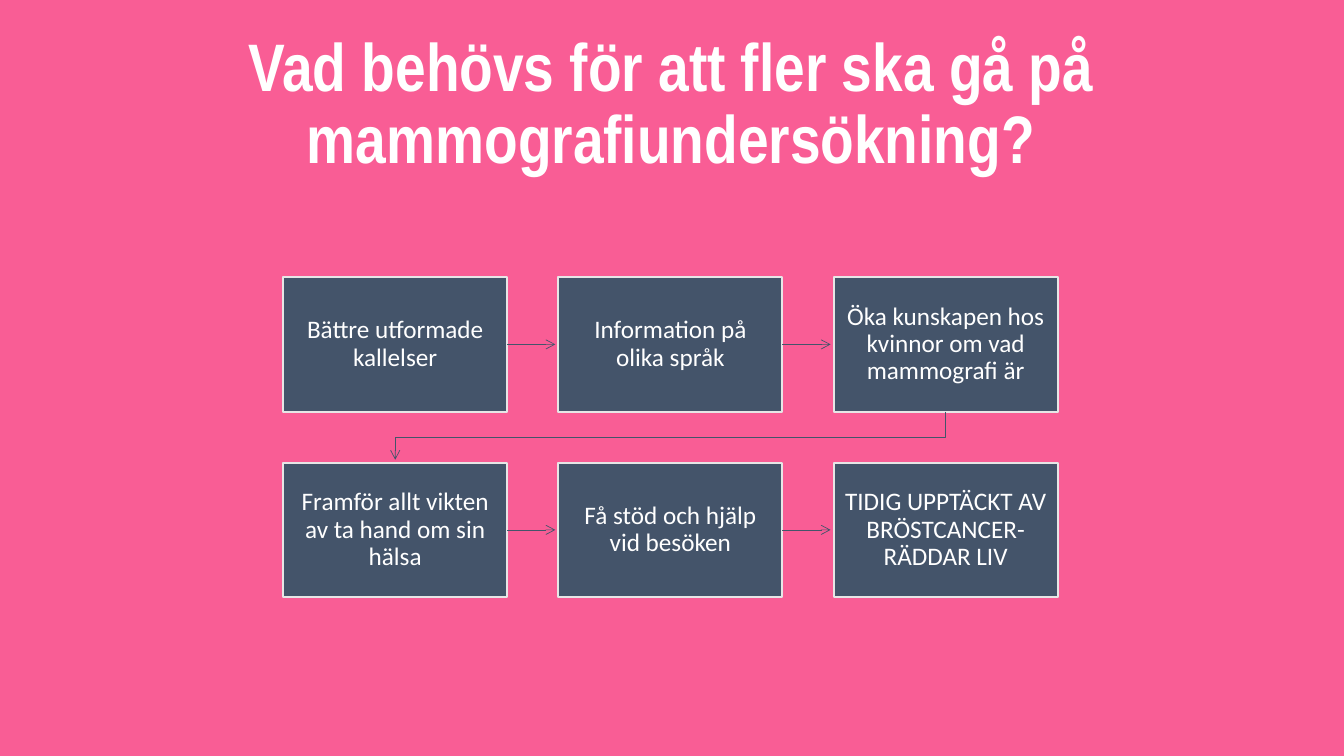
from lxml import etree
from pptx import Presentation
from pptx import util as u
from pptx.dml.color import RGBColor
from pptx.enum import shapes, text
from pptx.oxml import ns

HUES = {"pink": "F95D95", "slate": "44546A", "pale": "E7E6E6", "white": "FFFFFF"}
STEPS = [
    ["Bättre utformade kallelser", "Information på olika språk",
     "Öka kunskapen hos kvinnor om vad mammografi är"],
    ["Framför allt vikten av ta hand om sin hälsa", "Få stöd och hjälp vid besöken",
     "TIDIG UPPTÄCKT AV BRÖSTCANCER-RÄDDAR LIV"],
]
LEFT, TOP, WIDE, HIGH = 202.3, 198, 160, 96
STEP_X, STEP_Y, REACH = 196.6, 132.5, 34.4


def hue(name):
    return RGBColor.from_string(HUES[name])


def write(frame, words, size=18, font="Calibri", color="white", bold=False,
          anchor="MIDDLE", inset=(7.9, 7.9)):
    frame.word_wrap = True
    frame.auto_size = text.MSO_AUTO_SIZE.NONE
    frame.vertical_anchor = text.MSO_ANCHOR[anchor]
    frame.margin_left = frame.margin_right = u.Pt(inset[0])
    frame.margin_top = frame.margin_bottom = u.Pt(inset[1])
    para = frame.paragraphs[0]
    para.alignment = text.PP_ALIGN.CENTER
    para.line_spacing = 0.9
    para.space_before = u.Pt(0)
    run = para.add_run()
    run.text = words
    run.font.size, run.font.name, run.font.bold = u.Pt(size), font, bold
    run.font.color.rgb = hue(color)


class Deck:
    """Holds the presentation, the current slide and its drawing style."""

    def __init__(self, wide, high):
        self.prs = Presentation()
        self.prs.slide_width, self.prs.slide_height = u.Pt(wide), u.Pt(high)
        self.slide = self.prs.slides.add_slide(self.prs.slide_layouts[5])
        fill = self.slide.background.fill
        fill.solid()
        fill.fore_color.rgb = hue("pink")

    def title(self, words, x, y, w, h):
        head = self.slide.shapes.title
        head.left, head.top, head.width, head.height = map(u.Pt, (x, y, w, h))
        write(head.text_frame, words, size=48, font="Arial Narrow", bold=True,
              anchor="TOP", inset=(7.2, 3.6))

    def box(self, words, x, y):
        box = self.slide.shapes.add_shape(
            shapes.MSO_SHAPE.RECTANGLE, *map(u.Pt, (x, y, WIDE, HIGH)))
        box.shadow.inherit = False
        box.fill.solid()
        box.fill.fore_color.rgb = hue("slate")
        box.line.color.rgb = hue("pale")
        box.line.width = u.Pt(1.5)
        write(box.text_frame, words)

    def tip(self, item):
        item.line.color.rgb = hue("slate")
        item.line.width = u.Pt(0.5)
        line = item.element.spPr.find(ns.qn("a:ln"))
        etree.SubElement(line, ns.qn("a:tailEnd"), type="arrow")

    def arrow(self, x, y):
        link = self.slide.shapes.add_connector(
            shapes.MSO_CONNECTOR.STRAIGHT, *map(u.Pt, (x, y, x + REACH, y)))
        self.tip(link)
        etree.SubElement(link.element.spPr, ns.qn("a:effectLst"))

    def bend(self, points):
        spots = [(u.Pt(x), u.Pt(y)) for x, y in points]
        form = self.slide.shapes.build_freeform(*spots[0])
        form.add_line_segments(spots[1:], close=False)
        path = form.convert_to_shape()
        path.shadow.inherit = False
        path.fill.background()
        self.tip(path)


def main():
    deck = Deck(960, 540)
    deck.title("Vad behövs för att fler ska gå på mammografiundersökning?",
               165, 20, 629, 114.5)
    for row, line in enumerate(STEPS):
        for col, words in enumerate(line):
            x, y = LEFT + col * STEP_X, TOP + row * STEP_Y
            deck.box(words, x, y)
            if col < len(line) - 1:
                deck.arrow(x + WIDE, y + HIGH / 2)
    start = LEFT + WIDE / 2
    end, low = start + 2 * STEP_X, TOP + HIGH
    mid = low + (STEP_Y - HIGH) / 2
    deck.bend([(end, low), (end, mid), (start, mid), (start, low + REACH)])
    deck.prs.save("out.pptx")


if __name__ == "__main__":
    main()
